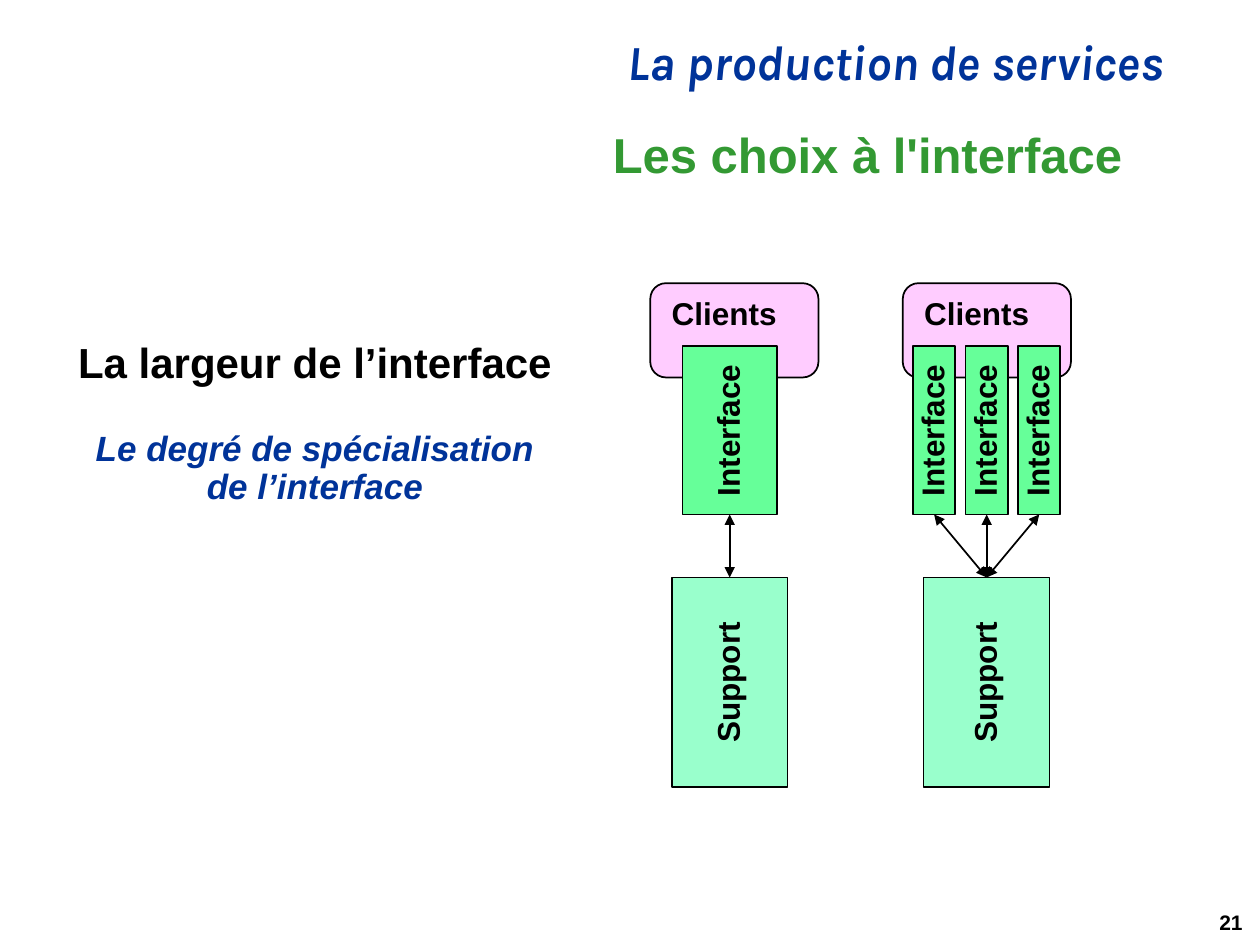
from pptx import Presentation
from pptx.dml.color import RGBColor
from pptx.enum.shapes import MSO_CONNECTOR, MSO_SHAPE
from pptx.enum.text import MSO_ANCHOR, PP_ALIGN
from pptx.util import Cm, Pt
from lxml.etree import SubElement
from pptx.oxml.ns import qn


def color(code):
    return RGBColor.from_string(code)


def add_line(frame, words, size, code="000000", align=PP_ALIGN.CENTER,
             font="Arial", italic=False, first=True, before=0):
    para = frame.paragraphs[0] if first else frame.add_paragraph()
    para.alignment = align
    para.line_spacing = 0.9
    para.space_before = Pt(before)
    run = para.add_run()
    run.text = words
    run.font.name = font
    run.font.size = Pt(size)
    run.font.bold = True
    run.font.italic = italic
    run.font.color.rgb = color(code)


def add_frame(slide, box, anchor=MSO_ANCHOR.TOP):
    frame = slide.shapes.add_textbox(*map(Cm, box)).text_frame
    frame.word_wrap = True
    frame.vertical_anchor = anchor
    return frame


def add_block(slide, kind, box, fill):
    shape = slide.shapes.add_shape(kind, *map(Cm, box))
    shape.shadow.inherit = False
    shape.fill.solid()
    shape.fill.fore_color.rgb = color(fill)
    shape.line.color.rgb = color("000000")
    shape.line.width = Pt(1)
    frame = shape.text_frame
    frame.word_wrap = False
    frame.margin_top = frame.margin_bottom = 0
    return shape


def add_upright(slide, words, mid, top, wide, high, fill):
    box = mid - high / 2, top + (high - wide) / 2, high, wide
    shape = add_block(slide, MSO_SHAPE.RECTANGLE, box, fill)
    shape.rotation = 270
    shape.text_frame.vertical_anchor = MSO_ANCHOR.MIDDLE
    add_line(shape.text_frame, words, 18)


def add_arrow(slide, start, end):
    arrow = slide.shapes.add_connector(MSO_CONNECTOR.STRAIGHT, *map(Cm, start + end))
    arrow.line.color.rgb = color("000000")
    arrow.line.width = Pt(1)
    line = arrow.line._get_or_add_ln()
    for tag in ("a:headEnd", "a:tailEnd"):
        SubElement(line, qn(tag), type="triangle")
    SubElement(arrow._element.spPr, qn("a:effectLst"))


def add_clients(slide, box):
    shape = add_block(slide, MSO_SHAPE.ROUNDED_RECTANGLE, box, "FFCCFF")
    frame = shape.text_frame
    frame.vertical_anchor = MSO_ANCHOR.TOP
    frame.margin_left = Cm(0.34)
    frame.margin_top = Cm(0.22)
    frame.word_wrap = True
    add_line(frame, "Clients", 18, align=PP_ALIGN.LEFT)


def add_model(slide, box, mid, count, wide, base):
    left, top, width, height = box
    add_clients(slide, (left, top, width, 1.9))
    face, high, deep, step = top + 1.27, 3.39, 4.23, 1.06
    foot = top + height - deep
    add_upright(slide, "Support", mid, foot, base, deep, "99FFCC")
    for i in range(count):
        x = mid + (i - (count - 1) / 2) * step
        add_upright(slide, "Interface", x, face, wide, high, "66FF99")
        add_arrow(slide, (x, face + high), (mid, foot))


def add_heads(slide, box):
    left, top, width, height = box
    frame = add_frame(slide, (left + 0.43, top, width - 0.43, 1.32))
    add_line(frame, "La production de services", 28, "003399",
             PP_ALIGN.RIGHT, "Karla", True)
    frame = add_frame(slide, (left, top + 1.9, 20.12, height - 1.9), MSO_ANCHOR.MIDDLE)
    add_line(frame, "Les choix à l'interface", 28, "339933", PP_ALIGN.RIGHT)


def add_notion(slide, box):
    frame = add_frame(slide, box)
    add_line(frame, "La largeur de l’interface", 24)
    add_line(frame, "Le degré de spécialisation", 20, "003399",
             italic=True, first=False, before=25)
    add_line(frame, "de l’interface", 20, "003399", italic=True, first=False)


def add_number(slide, box):
    frame = add_frame(slide, box, MSO_ANCHOR.BOTTOM)
    add_line(frame, "21", 12, align=PP_ALIGN.RIGHT)


def main():
    deck = Presentation()
    deck.slide_width, deck.slide_height = Cm(25.4), Cm(19.05)
    slide = deck.slides.add_slide(deck.slide_layouts[6])
    add_heads(slide, (2.75, 0.64, 20.95, 3.17))
    add_model(slide, (13.11, 5.71, 3.39, 10.16), 14.71, 1, 1.9, 2.33)
    add_model(slide, (18.2, 5.71, 3.39, 10.16), 19.89, 3, 0.85, 2.54)
    add_notion(slide, (1.06, 6.77, 10.58, 3.39))
    add_number(slide, (17.3, 17.6, 8, 1.37))
    deck.save("out.pptx")


if __name__ == "__main__":
    main()
